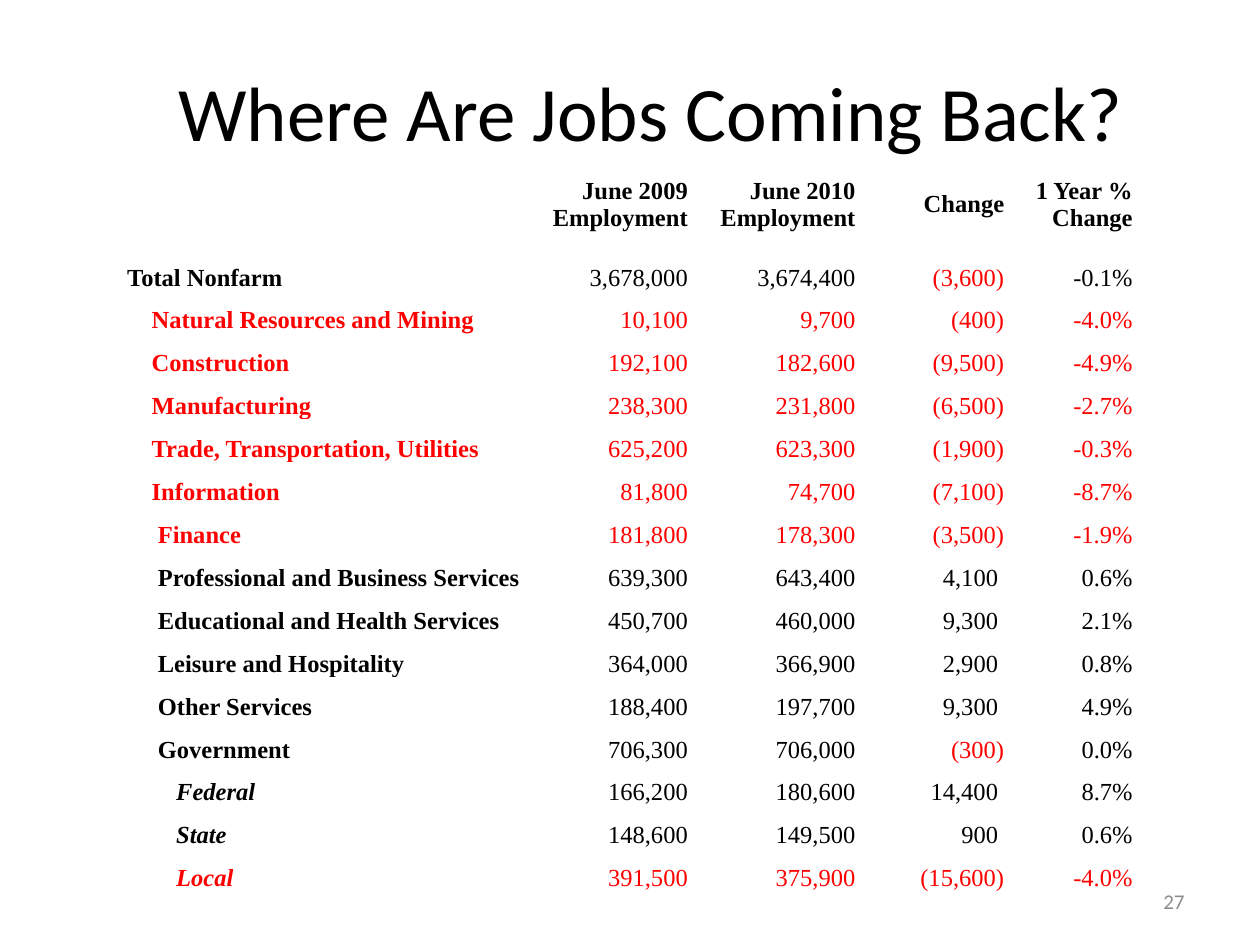
import pptx
import pptx.util
import pptx.dml.color
import pptx.enum.text

Pt = pptx.util.Pt
ALIGN = pptx.enum.text.PP_ALIGN
ANCHOR = pptx.enum.text.MSO_ANCHOR

COLORS = {"black": "000000", "red": "FF0000", "gray": "8C8C8C"}

HEADINGS = ["", "June 2009 Employment", "June 2010 Employment", "Change", "1 Year % Change"]
# Label indent in points, row colour, then the five cells
INDUSTRIES = [
    (0, "black", "Total Nonfarm", "3,678,000", "3,674,400", "(3,600)", "-0.1%"),
    (14, "red", "Natural Resources and Mining", "10,100", "9,700", "(400)", "-4.0%"),
    (14, "red", "Construction", "192,100", "182,600", "(9,500)", "-4.9%"),
    (14, "red", "Manufacturing", "238,300", "231,800", "(6,500)", "-2.7%"),
    (14, "red", "Trade, Transportation, Utilities", "625,200", "623,300", "(1,900)", "-0.3%"),
    (14, "red", "Information", "81,800", "74,700", "(7,100)", "-8.7%"),
    (17.5, "red", "Finance", "181,800", "178,300", "(3,500)", "-1.9%"),
    (17.5, "black", "Professional and Business Services", "639,300", "643,400", "4,100", "0.6%"),
    (17.5, "black", "Educational and Health Services", "450,700", "460,000", "9,300", "2.1%"),
    (17.5, "black", "Leisure and Hospitality", "364,000", "366,900", "2,900", "0.8%"),
    (17.5, "black", "Other Services", "188,400", "197,700", "9,300", "4.9%"),
    (17.5, "black", "Government", "706,300", "706,000", "(300)", "0.0%"),
    (28, "black", "Federal", "166,200", "180,600", "14,400", "8.7%"),
    (28, "black", "State", "148,600", "149,500", "900", "0.6%"),
    (28, "red", "Local", "391,500", "375,900", "(15,600)", "-4.0%"),
]
COLUMN_WIDTHS = [227.5, 94.3, 95.8, 85, 73.4]
ROW_HEIGHTS = [41, 29.5] + [24.53] * 14
INSET = 0.7
CHANGE = 3


def style(paragraph, font_name, size, color, align, bold=False, italic=False):
    paragraph.alignment = align
    for run in paragraph.runs:
        run.font.name = font_name
        run.font.size = Pt(size)
        run.font.bold = bold
        run.font.italic = italic
        run.font.color.rgb = pptx.dml.color.RGBColor.from_string(COLORS[color])


def fill_cell(cell, text, color, align, anchor, bold=False, italic=False, indent=0, hang=0):
    """Write one table cell; indent and hang widen its left and right margins."""
    cell.fill.background()
    cell.vertical_anchor = anchor
    cell.margin_left, cell.margin_right = Pt(INSET + indent), Pt(INSET + hang)
    cell.margin_top, cell.margin_bottom = Pt(INSET), Pt(0)
    cell.text_frame.text = text
    style(cell.text_frame.paragraphs[0], "Times New Roman", 14, color, align, bold, italic)


deck = pptx.Presentation()
deck.slide_width, deck.slide_height = Pt(720), Pt(540)
slide = deck.slides.add_slide(deck.slide_layouts[5])

title = slide.shapes.title
title.left, title.top, title.width, title.height = Pt(48), Pt(30), Pt(648), Pt(66)
title.text_frame.text = "Where Are Jobs Coming Back?"
title.text_frame.vertical_anchor = ANCHOR.MIDDLE
style(title.text_frame.paragraphs[0], "Calibri", 44, "black", ALIGN.CENTER)

jobs = slide.shapes.add_table(
    len(ROW_HEIGHTS), len(COLUMN_WIDTHS), Pt(72), Pt(96), Pt(576), Pt(414)
).table
jobs.first_row = jobs.horz_banding = False
for column, width in zip(jobs.columns, COLUMN_WIDTHS):
    column.width = Pt(width)
for row, height in zip(jobs.rows, ROW_HEIGHTS):
    row.height = Pt(height)

for c, heading in enumerate(HEADINGS):
    fill_cell(jobs.cell(0, c), heading, "black", ALIGN.RIGHT, ANCHOR.MIDDLE, bold=True)

for r, (indent, row_color, label, *figures) in enumerate(INDUSTRIES, start=1):
    fill_cell(jobs.cell(r, 0), label, row_color, ALIGN.LEFT, ANCHOR.BOTTOM,
              bold=True, italic=indent == 28, indent=indent)
    for c, figure in enumerate(figures, start=1):
        is_loss = figure.startswith("(")
        # Gains stop short of the edge so digits line up with bracketed losses
        hang = 3.5 if c == CHANGE and not is_loss else 0
        fill_cell(jobs.cell(r, c), figure, "red" if is_loss else row_color,
                  ALIGN.RIGHT, ANCHOR.BOTTOM, hang=hang)

page_number = slide.shapes.add_textbox(Pt(516), Pt(500.5), Pt(168), Pt(28.75)).text_frame
page_number.word_wrap = True
page_number.vertical_anchor = ANCHOR.MIDDLE
page_number.text = "27"
style(page_number.paragraphs[0], "Calibri", 12, "gray", ALIGN.RIGHT)

deck.save("out.pptx")
